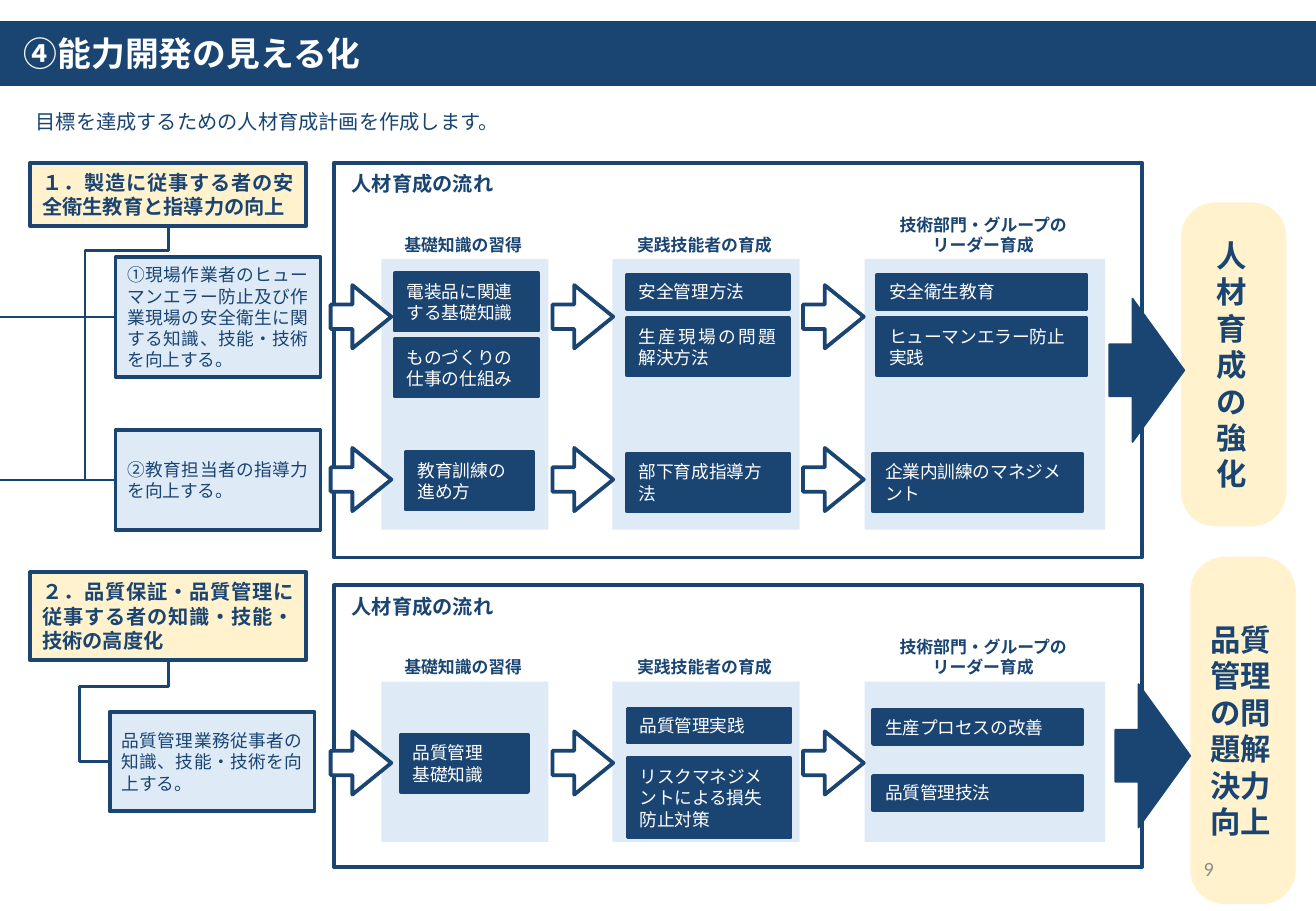
from pptx import Presentation
from pptx import util as u
from pptx.dml.color import RGBColor
from pptx.enum import shapes, text
from pptx.oxml.ns import qn

Pt = u.Pt
SHAPE = shapes.MSO_SHAPE
ALIGN = text.PP_ALIGN
COLORS = {"navy": "1A4472", "pale": "DEEBF7", "cream": "FFF2CC",
          "white": "FFFFFF", "grey": "8C8C8C"}
FONT = "Noto Sans CJK JP"

prs = Presentation()
prs.slide_width, prs.slide_height = Pt(780), Pt(540)
s = prs.slides.add_slide(prs.slide_layouts[6])


def add_box(kind, x, y, w, h, fill, line=0, adj=()):
    sp = s.shapes.add_shape(kind, Pt(x), Pt(y), Pt(w), Pt(h))
    sp.shadow.inherit = False
    sp.fill.solid()
    sp.fill.fore_color.rgb = RGBColor.from_string(COLORS[fill])
    if line:
        sp.line.color.rgb = RGBColor.from_string(COLORS["navy"])
        sp.line.width = Pt(line)
    else:
        sp.line.fill.background()
    for i, value in enumerate(adj):
        sp.adjustments[i] = value
    return sp


def write(target, words, size, color="navy", bold=False, align=ALIGN.LEFT, font=FONT):
    """Fill a shape, or a new text box when target is (x, y, w, h)."""
    if isinstance(target, tuple):
        target = s.shapes.add_textbox(*map(Pt, target))
    tf = target.text_frame
    tf.word_wrap = True
    tf.vertical_anchor = text.MSO_ANCHOR.MIDDLE
    tf.text = words
    for p in tf.paragraphs:
        p.alignment = align
        for r in p.runs:
            r.font.size, r.font.bold, r.font.name = Pt(size), bold, font
            r.font.color.rgb = RGBColor.from_string(COLORS[color])
            ea = r._r.get_or_add_rPr().makeelement(qn("a:ea"), {"typeface": font})
            r.font._element.find(qn("a:latin")).addnext(ea)
    return tf


# Title bar and lead sentence
add_box(SHAPE.RECTANGLE, 0, 12.5, 780, 38.5, "navy")
write((7, 15, 300, 32.5), "④能力開発の見える化", 20, "white", True)
write((14, 61, 741, 21.5), "目標を達成するための人材育成計画を作成します。", 12)

# Flow panels with three stages each
stages = [(226, 99, 20, "基礎知識の習得"),
          (363, 111, 20, "実践技能者の育成"),
          (512.5, 142.5, 32, "技術部門・グループの\nリーダー育成")]
for top, height, stage_height in [(96.5, 234, 160.5), (347, 167, 95)]:
    add_box(SHAPE.RECTANGLE, 198, top, 479, height, "white", 2.25)
    write((196, top + 1.5, 109, 21.5), "人材育成の流れ", 12, bold=True, align=ALIGN.CENTER)
    for x, w, h, heading in stages:
        add_box(SHAPE.RECTANGLE, x, top + 57, w, stage_height, "pale")
        write((x - 2, top + 58.5 - h, w + 2, h), heading, 10, bold=True, align=ALIGN.CENTER)

# Training subjects
subjects = [
    (234, 162, 85, 34, "電装品に関連する基礎知識"),
    (234, 201, 85, 34, "ものづくりの仕事の仕組み"),
    (240.5, 268, 75.5, 34, "教育訓練の進め方"),
    (371.5, 163, 96, 20, "安全管理方法"),
    (371.5, 188.5, 96, 34, "生産現場の問題解決方法"),
    (371.5, 269, 96.5, 34, "部下育成指導方法"),
    (520, 163, 124, 20, "安全衛生教育"),
    (520, 188.5, 124, 34, "ヒューマンエラー防止実践"),
    (517.5, 269, 124, 34, "企業内訓練のマネジメント"),
    (237.5, 435.5, 75.5, 34, "品質管理\n基礎知識"),
    (372, 420, 96.5, 20, "品質管理実践"),
    (372, 449.5, 96.5, 47, "リスクマネジメントによる損失防止対策"),
    (517.5, 421, 124, 20, "生産プロセスの改善"),
    (517.5, 460, 124, 20, "品質管理技法"),
]
for x, y, w, h, words in subjects:
    align = ALIGN.JUSTIFY if words.startswith("生産現場") else ALIGN.LEFT
    write(add_box(SHAPE.RECTANGLE, x, y, w, h, "navy", 2.25), words, 10.5, "white", align=align)

# Goals and their targets
goals = [(96.5, 37.5, "１．製造に従事する者の安全衛生教育と指導力の向上"),
         (339, 52.5, "２．品質保証・品質管理に従事する者の知識・技能・技術の高度化")]
for y, h, words in goals:
    write(add_box(SHAPE.RECTANGLE, 18, y, 163.5, h, "cream", 2.25),
          words, 12, bold=True, align=ALIGN.JUSTIFY)

targets = [
    (68.5, 152.5, 71, "①現場作業者のヒューマンエラー防止及び作業現場の安全衛生に関する知識、技能・技術を向上する。"),
    (68.5, 255, 59, "②教育担当者の指導力を向上する。"),
    (65, 422, 59, "品質管理業務従事者の知識、技能・技術を向上する。"),
]
target_boxes = []
for x, y, h, words in targets:
    sp = add_box(SHAPE.RECTANGLE, x, y, 121.5, h, "pale", 2.25)
    write(sp, words, 10.5, align=ALIGN.JUSTIFY)
    target_boxes.append(sp)

# Stage arrows
for y in (169, 265.5, 433.5):
    for x in (196, 327.5, 476):
        add_box(SHAPE.RIGHT_ARROW, x, y, 36, 37.5, "white", 2.25, (0.386, 0.641))

# Elbow lines from each goal to its last target
for points in [[(100, 134), (100, 148.5), (50.5, 148.5), (50.5, 284.5), (68.5, 284.5)],
               [(100, 391.5), (100, 407), (47, 407), (47, 451.5), (65, 451.5)]]:
    elbow = s.shapes.build_freeform(*map(Pt, points[0]))
    elbow.add_line_segments([(Pt(x), Pt(y)) for x, y in points[1:]], close=False)
    sp = elbow.convert_to_shape()
    sp.shadow.inherit = False
    sp.fill.background()
    sp.line.color.rgb = RGBColor.from_string(COLORS["navy"])
    sp.line.width = Pt(1.5)

# Lines from the slide edge to the first two targets
for sp in target_boxes[:2]:
    y = sp.top + sp.height // 2
    line = s.shapes.add_connector(shapes.MSO_CONNECTOR.STRAIGHT, 0, y, sp.left, y)
    line.end_connect(sp, 1)
    line.line.color.rgb = RGBColor.from_string(COLORS["navy"])
    line.line.width = Pt(1.5)
    props = line._element.spPr
    props.append(props.makeelement(qn("a:effectLst"), {}))

# Outcomes with upright stacked text
outcomes = [(700, 120, 192, 712, 36, "人材育成の強化", 657.5, 177),
            (705.5, 330, 206, 707, 57, "品質管理の問題解決力向上", 661, 405.5)]
for x, y, h, text_x, text_w, words, arrow_x, arrow_y in outcomes:
    add_box(SHAPE.ROUNDED_RECTANGLE, x, y, 62.5, h, "cream", adj=(0.327,))
    tf = write((text_x, y + 10.5, text_w, h - 21), words, 18, bold=True, align=ALIGN.CENTER)
    tf._txBody.bodyPr.set("vert", "wordArtVertRtl")
    add_box(SHAPE.RIGHT_ARROW, arrow_x, arrow_y, 44.5, 85, "navy", 1, (0.363, 0.69))

# Page number
write((551, 500.5, 175.5, 29), "9", 12, "grey", align=ALIGN.RIGHT, font="Calibri")

prs.save("out.pptx")
